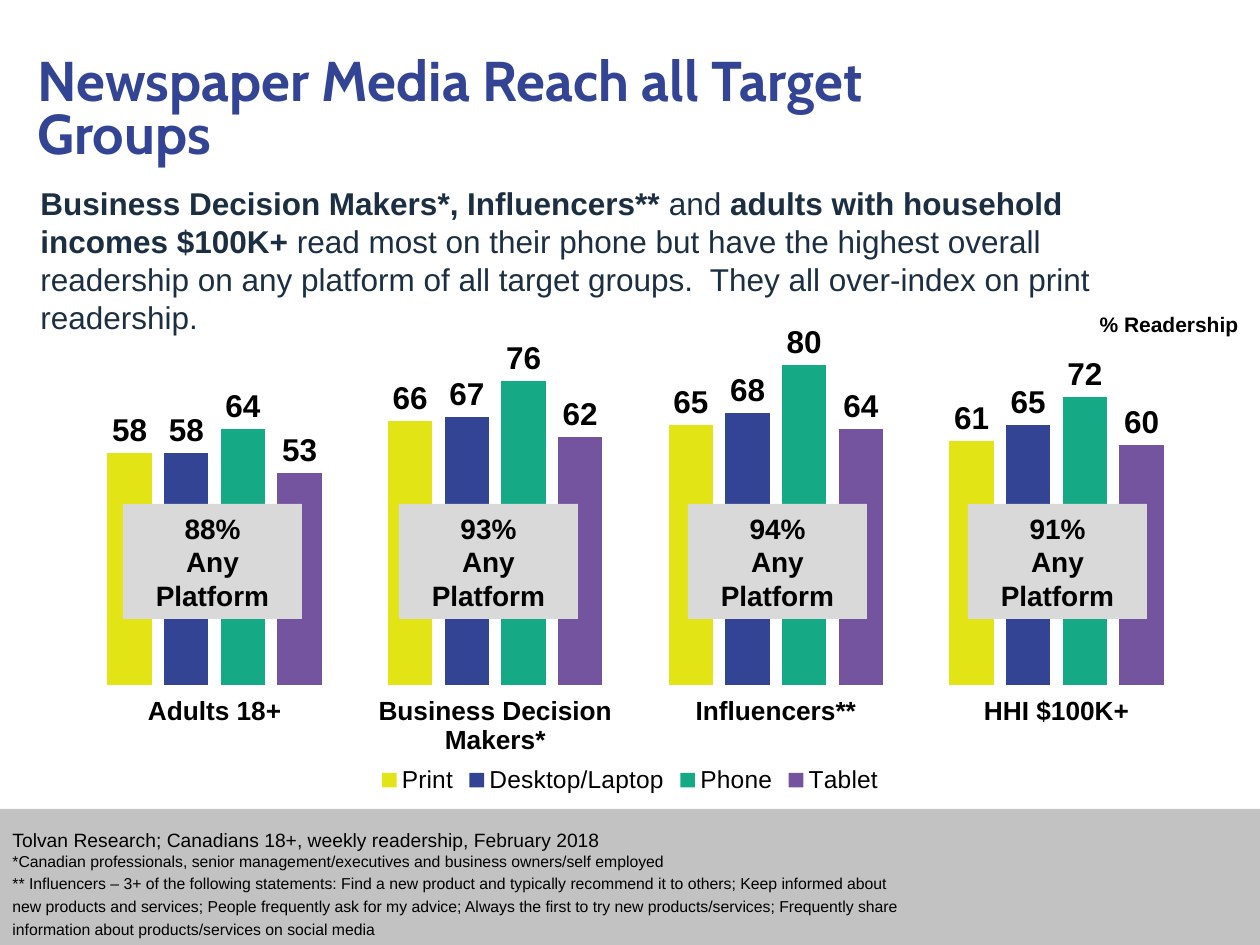
"""Build the slide on newspaper readership by target group and platform."""
from dataclasses import dataclass

import pptx
import pptx.chart.data
import pptx.dml.color
import pptx.enum.chart
import pptx.enum.shapes
import pptx.enum.text
import pptx.oxml
import pptx.oxml.ns
import pptx.util


@dataclass(frozen=True)
class Theme:
    heading_font: str = "Cabin"
    body_font: str = "Arial"
    heading: str = "334495"
    body: str = "1C2F42"
    ink: str = "000000"
    band: str = "C2C2C2"
    badge: str = "D9D9D9"
    title_size: int = 32
    body_size: int = 18
    badge_size: int = 16
    category_size: int = 15
    legend_size: int = 14
    unit_size: int = 12
    source_size: int = 11
    note_size: int = 9


THEME = Theme()
PX_PER_INCH = 126
SLIDE_SIZE = (1260, 945)

TITLE = "Newspaper Media Reach all Target Groups"
SUMMARY = [
    ("Business Decision Makers*, Influencers** ", True),
    ("and", False),
    (" adults with household incomes $100K+ ", True),
    ("read most on their phone but have the highest overall readership on any platform "
     "of all target groups.  They all over-index on print readership.", False),
]
UNIT = "% Readership"
GROUPS = ["Adults 18+", "Business Decision Makers*", "Influencers**", "HHI $100K+"]
PLATFORMS = [
    ("Print", "E3E416", (58, 66, 65, 61)),
    ("Desktop/Laptop", "334495", (58, 67, 68, 65)),
    ("Phone", "16A985", (64, 76, 80, 72)),
    ("Tablet", "74539F", (53, 62, 64, 60)),
]
ANY_PLATFORM = [("88%", 123), ("93%", 399), ("94%", 688), ("91%", 968)]
NOTES = [
    ("Tolvan Research; Canadians 18+, weekly readership, February 2018", THEME.source_size, 1.0),
    ("*Canadian professionals, senior management/executives and business owners/self employed",
     THEME.note_size, 1.0),
    ("** Influencers – 3+ of the following statements: Find a new product and typically recommend "
     "it to others; Keep informed about new products and services; People frequently ask for my "
     "advice; Always the first to try new products/services; Frequently share information about "
     "products/services on social media", THEME.note_size, 1.2),
]

TITLE_BOX = (25, 52, 1032, 123)
SUMMARY_BOX = (28, 178, 1176, 165)
UNIT_BOX = (1084, 305, 170, 38)
CHART_BOX = (63, 228, 1134, 571)
BAND_BOX = (0, 809, 1260, 136)
NOTES_BOX = (0, 822, 912, 123)
BADGE_TOP, BADGE_WIDTH, BADGE_HEIGHT = 504, 179, 115
PLOT_AREA = {"x": 0.01, "y": 0.17, "w": 0.99, "h": 0.63}
AXIS_MAX = 90
CENTER = pptx.enum.text.PP_ALIGN.CENTER


def px(length):
    return pptx.util.Emu(round(length * 914400 / PX_PER_INCH))


def rgb(value):
    return pptx.dml.color.RGBColor.from_string(value)


def set_font(font, size, color=THEME.ink, bold=False, name=THEME.body_font):
    font.name, font.size, font.bold = name, pptx.util.Pt(size), bold
    font.color.rgb = rgb(color)


def paragraphs(frame, count):
    frame.word_wrap = True
    frame.auto_size = pptx.enum.text.MSO_AUTO_SIZE.SHAPE_TO_FIT_TEXT
    return [frame.paragraphs[0]] + [frame.add_paragraph() for _ in range(count - 1)]


def add_text(slide, box, count=1):
    return paragraphs(slide.shapes.add_textbox(*map(px, box)).text_frame, count)


def add_block(slide, box, color):
    block = slide.shapes.add_shape(pptx.enum.shapes.MSO_SHAPE.RECTANGLE, *map(px, box))
    block.shadow.inherit = False
    block.fill.solid()
    block.fill.fore_color.rgb = rgb(color)
    block.line.fill.background()
    return block


def fix_plot_area(chart):
    plot_area = chart._chartSpace.chart.plotArea
    for layout in plot_area.findall(pptx.oxml.ns.qn("c:layout")):
        plot_area.remove(layout)
    modes = '<c:layoutTarget val="inner"/><c:xMode val="edge"/><c:yMode val="edge"/>'
    sides = "".join(f'<c:{side} val="{share}"/>' for side, share in PLOT_AREA.items())
    plot_area.insert(0, pptx.oxml.parse_xml(
        f'<c:layout {pptx.oxml.ns.nsdecls("c")}><c:manualLayout>{modes}{sides}'
        '</c:manualLayout></c:layout>'))


def add_readership_chart(slide):
    readership = pptx.chart.data.CategoryChartData(number_format="General")
    readership.categories = GROUPS
    for name, _, values in PLATFORMS:
        readership.add_series(name, values)
    chart = slide.shapes.add_chart(
        pptx.enum.chart.XL_CHART_TYPE.COLUMN_CLUSTERED, *map(px, CHART_BOX), readership).chart
    set_font(chart.font, THEME.body_size)
    chart.has_title = False
    chart.has_legend = True
    chart.legend.position = pptx.enum.chart.XL_LEGEND_POSITION.BOTTOM
    chart.legend.include_in_layout = False
    set_font(chart.legend.font, THEME.legend_size)

    chart.value_axis.minimum_scale, chart.value_axis.maximum_scale = 0, AXIS_MAX
    chart.value_axis.has_major_gridlines = False
    chart.value_axis.visible = False
    chart.category_axis.format.line.fill.background()
    set_font(chart.category_axis.tick_labels.font, THEME.category_size, bold=True)

    columns = chart.plots[0]
    columns.gap_width, columns.overlap = 150, -28
    columns.vary_by_categories = False
    for series, (_, color, _) in zip(columns.series, PLATFORMS):
        series.format.fill.solid()
        series.format.fill.fore_color.rgb = rgb(color)
        labels = series.data_labels
        labels.show_value = True
        labels.position = pptx.enum.chart.XL_LABEL_POSITION.OUTSIDE_END
        set_font(labels.font, THEME.body_size, bold=True)
    fix_plot_area(chart)


def add_badge(slide, share, left):
    badge = add_block(slide, (left, BADGE_TOP, BADGE_WIDTH, BADGE_HEIGHT), THEME.badge)
    lines = (share, "Any Platform")
    for paragraph, line in zip(paragraphs(badge.text_frame, len(lines)), lines):
        paragraph.text = line
        paragraph.alignment = CENTER
        set_font(paragraph.font, THEME.badge_size, bold=True)


def main():
    deck = pptx.Presentation()
    deck.slide_width, deck.slide_height = map(px, SLIDE_SIZE)
    slide = deck.slides.add_slide(deck.slide_layouts[6])

    add_block(slide, BAND_BOX, THEME.band)
    add_readership_chart(slide)

    title = add_text(slide, TITLE_BOX)[0]
    title.text = TITLE
    title.line_spacing = 0.8
    set_font(title.font, THEME.title_size, THEME.heading, True, THEME.heading_font)

    summary = add_text(slide, SUMMARY_BOX)[0]
    for words, bold in SUMMARY:
        run = summary.add_run()
        run.text = words
        set_font(run.font, THEME.body_size, THEME.body, bold)

    for paragraph, (note, size, spacing) in zip(add_text(slide, NOTES_BOX, len(NOTES)), NOTES):
        paragraph.text = note
        paragraph.line_spacing = spacing
        set_font(paragraph.font, size)

    for share, left in ANY_PLATFORM:
        add_badge(slide, share, left)

    unit = add_text(slide, UNIT_BOX)[0]
    unit.text = UNIT
    unit.alignment = CENTER
    set_font(unit.font, THEME.unit_size, bold=True)

    deck.save("out.pptx")


if __name__ == "__main__":
    main()
